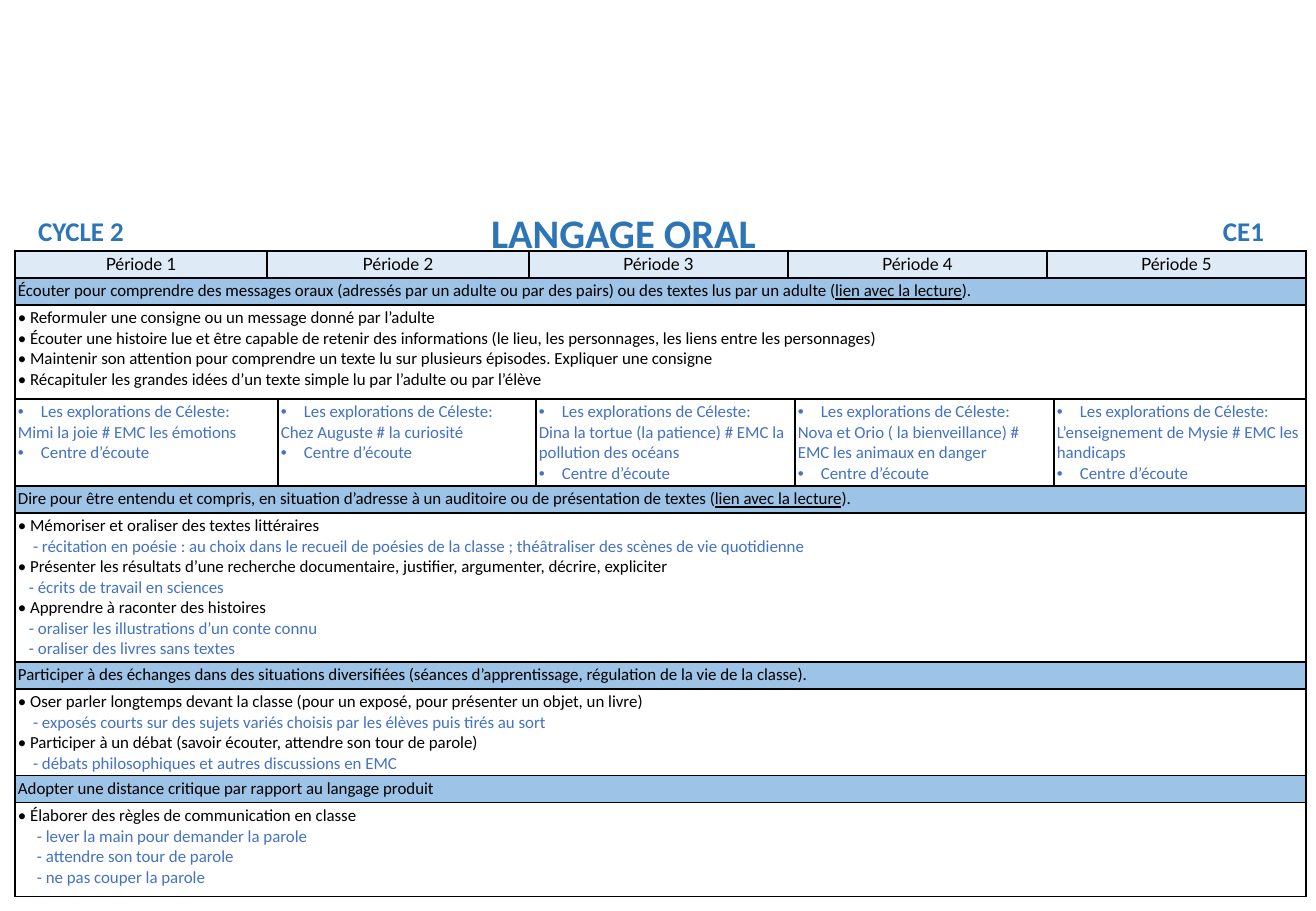
from lxml import etree
from pptx import Presentation
from pptx import util as u
from pptx.dml.color import RGBColor
from pptx.enum import shapes, text
from pptx.oxml import ns

WHITE = RGBColor(0xFF, 0xFF, 0xFF)
BLACK = RGBColor(0x00, 0x00, 0x00)
HEADING = RGBColor(0x2E, 0x75, 0xB6)
ACTIVITY = RGBColor(0x44, 0x72, 0xC4)
PERIOD_FILL = RGBColor(0xDE, 0xEB, 0xF7)
SKILL_FILL = RGBColor(0x9D, 0xC3, 0xE6)

SCALE = 914400 / 121.5
LINK = "lien avec la lecture"
BULLET_INDENT = 23

# Column and row sizes in px: five periods with narrow columns between them
COLUMNS = [252, 11, 251, 7, 252, 7, 252, 7, 252]
ROWS = [27, 27, 94, 87, 27, 149, 27, 87, 27, 94]

EXPLORATIONS = [
    "Mimi la joie # EMC les émotions",
    "Chez Auguste # la curiosité",
    "Dina la tortue (la patience) # EMC la pollution des océans",
    "Nova et Orio ( la bienveillance) # EMC les animaux en danger",
    "L’enseignement de Mysie # EMC les handicaps",
]

# Row of each skill: its title, then lines as (indent in px, text)
SKILLS = {
    1: (f"Écouter pour comprendre des messages oraux (adressés par un adulte ou par des pairs) "
        f"ou des textes lus par un adulte ({LINK}).", [
            (0, "• Reformuler une consigne ou un message donné par l’adulte"),
            (0, "• Écouter une histoire lue et être capable de retenir des informations "
                "(le lieu, les personnages, les liens entre les personnages)"),
            (0, "• Maintenir son attention pour comprendre un texte lu sur plusieurs épisodes. "
                "Expliquer une consigne"),
            (0, "• Récapituler les grandes idées d’un texte simple lu par l’adulte ou par l’élève")]),
    4: (f"Dire pour être entendu et compris, en situation d’adresse à un auditoire "
        f"ou de présentation de textes ({LINK}).", [
            (0, "• Mémoriser et oraliser des textes littéraires"),
            (15, "- récitation en poésie : au choix dans le recueil de poésies de la classe ; "
                 "théâtraliser des scènes de vie quotidienne"),
            (0, "• Présenter les résultats d’une recherche documentaire, justifier, argumenter, "
                "décrire, expliciter"),
            (11, "- écrits de travail en sciences"),
            (0, "• Apprendre à raconter des histoires"),
            (11, "- oraliser les illustrations d’un conte connu"),
            (11, "- oraliser des livres sans textes")]),
    6: ("Participer à des échanges dans des situations diversifiées "
        "(séances d’apprentissage, régulation de la vie de la classe).", [
            (0, "• Oser parler longtemps devant la classe (pour un exposé, pour présenter un objet, un livre)"),
            (15, "- exposés courts sur des sujets variés choisis par les élèves puis tirés au sort"),
            (0, "• Participer à un débat (savoir écouter, attendre son tour de parole)"),
            (15, "- débats philosophiques et autres discussions en EMC")]),
    8: ("Adopter une distance critique par rapport au langage produit", [
            (0, "• Élaborer des règles de communication en classe"),
            (19, "- lever la main pour demander la parole"),
            (19, "- attendre son tour de parole"),
            (19, "- ne pas couper la parole")]),
}


def px(length):
    return u.Emu(round(length * SCALE))


def set_all(target, values):
    for name, value in values.items():
        setattr(target, name, value)


class Page:
    font = "Calibri"

    def __init__(self, slide):
        self.slide = slide

    def wording(self, paragraph, words, size=10, color=BLACK, bold=False, font=None, align=None):
        """Fill a paragraph, underlining the link wherever it stands."""
        paragraph.alignment = align
        for part in filter(None, words.partition(LINK)):
            run = paragraph.add_run()
            run.text = part
            set_all(run.font, {"name": font or self.font, "size": u.Pt(size),
                               "bold": bold, "underline": part == LINK})
            run.font.color.rgb = color

    def indent(self, paragraph, left, bullet=False):
        props = paragraph._p.get_or_add_pPr()
        props.set("marL", str(px(left)))
        props.set("indent", str(px(-left if bullet else 0)))
        if bullet:
            etree.SubElement(props, ns.qn("a:buFont"), typeface="Arial")
            etree.SubElement(props, ns.qn("a:buChar"), char="•")

    def title(self, words, box):
        frame = self.slide.shapes.add_textbox(*map(px, box)).text_frame
        set_all(frame, {"word_wrap": False, "vertical_anchor": text.MSO_ANCHOR.MIDDLE})
        self.wording(frame.paragraphs[0], words, 24, HEADING, True, align=text.PP_ALIGN.CENTER)

    def label(self, words, box, align):
        rect = self.slide.shapes.add_shape(shapes.MSO_SHAPE.RECTANGLE, *map(px, box))
        rect.shadow.inherit = False
        rect.fill.solid()
        rect.fill.fore_color.rgb = WHITE
        rect.line.fill.background()
        set_all(rect.text_frame, {"word_wrap": True, "vertical_anchor": text.MSO_ANCHOR.TOP})
        self.wording(rect.text_frame.paragraphs[0], words, 16, HEADING, True, align=align)

    def border(self, cell):
        props = cell._tc.get_or_add_tcPr()
        for side in "LRTB":
            line = etree.SubElement(props, ns.qn(f"a:ln{side}"), w=str(u.Pt(1)))
            fill = etree.SubElement(line, ns.qn("a:solidFill"))
            etree.SubElement(fill, ns.qn("a:srgbClr"), val=str(BLACK))

    def table(self, left, top):
        frame = self.slide.shapes.add_table(len(ROWS), len(COLUMNS), px(left), px(top),
                                            px(sum(COLUMNS)), px(sum(ROWS)))
        table = frame.table
        set_all(table, {"first_row": False, "horz_banding": False})
        for column, width in zip(table.columns, COLUMNS):
            column.width = px(width)
        for row, height in zip(table.rows, ROWS):
            row.height = px(height)
        for cell in table.iter_cells():
            set_all(cell, {"margin_left": px(3), "margin_right": px(3),
                           "margin_top": px(3), "margin_bottom": px(2)})
            self.border(cell)
            cell.fill.background()
        return table

    def cell(self, table, row, first, last, fill=None):
        """Merge a stretch of one row and return its text frame."""
        cell = table.cell(row, first)
        if last > first:
            cell.merge(table.cell(row, last))
        if fill is not None:
            cell.fill.solid()
            cell.fill.fore_color.rgb = fill
        return cell.text_frame

    def lines(self, frame, count):
        return [frame.paragraphs[0]] + [frame.add_paragraph() for _ in range(count - 1)]


def main():
    deck = Presentation()
    set_all(deck, {"slide_width": px(1316), "slide_height": px(911)})
    page = Page(deck.slides.add_slide(deck.slide_layouts[6]))

    # Headings
    page.title("LANGAGE ORAL", (443, 202, 361, 61))
    page.label("CYCLE 2", (0, 209, 162, 64), text.PP_ALIGN.CENTER)
    page.label("CE1", (1211, 209, 101, 64), text.PP_ALIGN.LEFT)

    programme = page.table(15, 251)
    last_column = len(COLUMNS) - 1

    # Periods and their explorations
    for number, exploration in enumerate(EXPLORATIONS):
        column = 2 * number
        period = page.cell(programme, 0, max(column - 1, 0), column, PERIOD_FILL)
        page.wording(period.paragraphs[0], f"Période {number + 1}", font="Lato",
                     align=text.PP_ALIGN.CENTER)
        activities = page.cell(programme, 3, column, min(column + 1, last_column))
        words = ["Les explorations de Céleste:", exploration, "Centre d’écoute"]
        for paragraph, activity in zip(page.lines(activities, len(words)), words):
            page.wording(paragraph, activity, color=ACTIVITY)
            if activity != exploration:
                page.indent(paragraph, BULLET_INDENT, bullet=True)

    # Skills: a coloured title row, then the row of goals and activities
    for row, (skill, goals) in SKILLS.items():
        heading = page.cell(programme, row, 0, last_column, SKILL_FILL)
        page.wording(heading.paragraphs[0], skill)
        body = page.cell(programme, row + 1, 0, last_column)
        for paragraph, (left, goal) in zip(page.lines(body, len(goals)), goals):
            page.wording(paragraph, goal, color=ACTIVITY if left else BLACK)
            page.indent(paragraph, left)

    deck.save("out.pptx")


if __name__ == "__main__":
    main()
